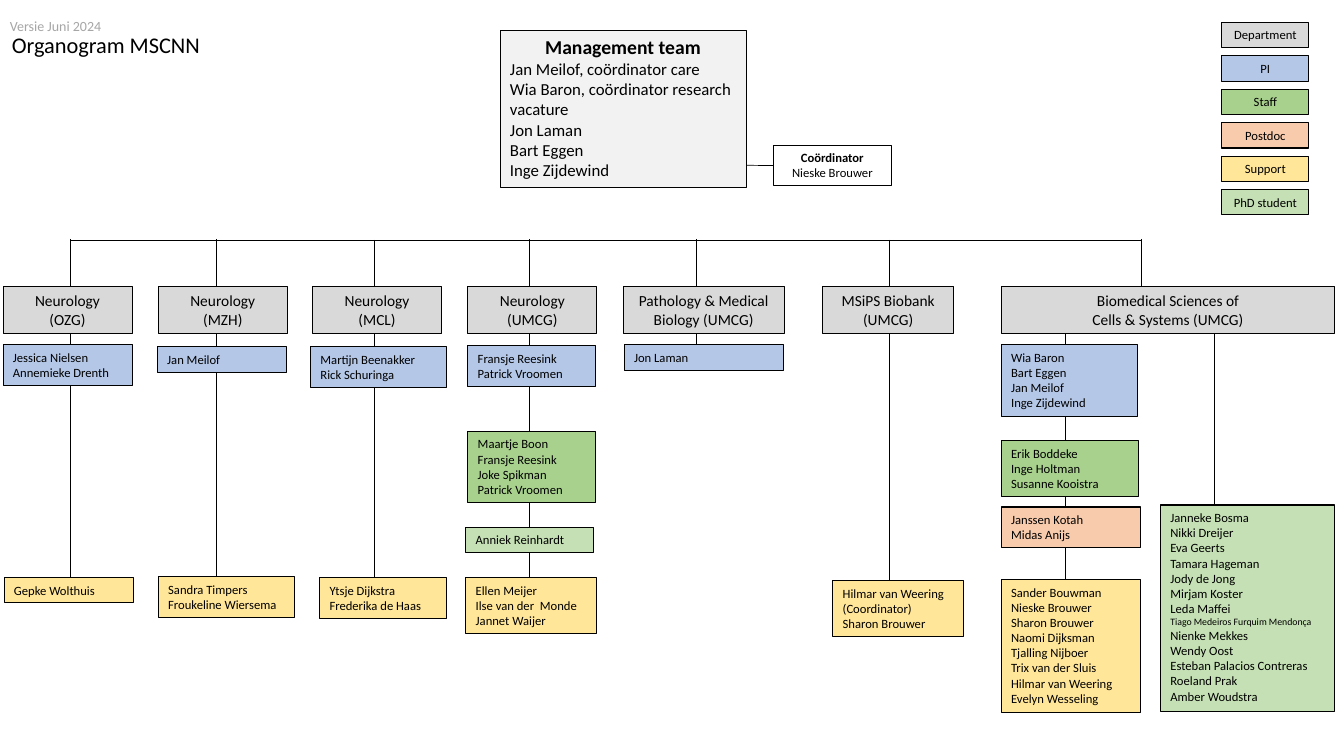
from lxml import etree
from pptx import Presentation
from pptx.dml.color import RGBColor
from pptx.enum.shapes import MSO_CONNECTOR as Line, MSO_SHAPE as Shape
from pptx.enum.text import MSO_ANCHOR as Anchor, MSO_AUTO_SIZE as AutoSize, PP_ALIGN as Align
from pptx.oxml.ns import qn
from pptx.util import Emu, Pt

PX = 9144  # one px is a hundredth of an inch
FONT = "Calibri"
LINE_PX = 1.22 * 100 / 72  # line height in px for each point of text size
INSET = 10
COLORS = {
    "Department": "D9D9D9", "PI": "B4C7E7", "Staff": "A9D18E",
    "Postdoc": "F8CBAD", "Support": "FFE699", "PhD student": "C5E0B4",
    "management": "F2F2F2", "white": "FFFFFF", "black": "000000", "muted": "A6A6A6",
}
SMALL_NAMES = {"Tiago Medeiros Furquim Mendonça": 7}


def px(value):
    return Emu(round(value * PX))


def color(name):
    return RGBColor.from_string(COLORS[name])


def write(para, text, size=9, bold=False, ink="black", align=Align.LEFT):
    para.alignment = align
    span = para.add_run()
    span.text = text
    span.font.name = FONT
    span.font.size = Pt(size)
    span.font.bold = bold
    span.font.color.rgb = color(ink)


def add_box(page, fill, left, top, width, lines, size=9, align=Align.LEFT,
            lead_size=None, height=None):
    """Draw a filled box; lead_size makes the first line a bold centred heading."""
    sizes = [SMALL_NAMES.get(line, size) for line in lines]
    if lead_size:
        sizes[0] = lead_size
    height = height or 2 * INSET / 2 + LINE_PX * sum(sizes)
    box = page.shapes.add_shape(Shape.RECTANGLE, px(left), px(top), px(width), px(height))
    box.shadow.inherit = False
    box.fill.solid()
    box.fill.fore_color.rgb = color(fill)
    box.line.color.rgb = color("black")
    box.line.width = Pt(0.75)
    frame = box.text_frame
    frame.word_wrap = True
    frame.vertical_anchor = Anchor.TOP
    for index, (line, line_size) in enumerate(zip(lines, sizes)):
        para = frame.add_paragraph() if index else frame.paragraphs[0]
        lead = bool(lead_size) and index == 0
        write(para, line, size=line_size, bold=lead, align=Align.CENTER if lead else align)
    return box


def add_line(page, x1, y1, x2, y2):
    line = page.shapes.add_connector(Line.STRAIGHT, px(x1), px(y1), px(x2), px(y2))
    line.line.color.rgb = color("black")
    line.line.width = Pt(0.5)
    etree.SubElement(line._element.spPr, qn("a:effectLst"))
    return line


def add_titles(page, left, top):
    title = page.shapes.title
    version = page.shapes.add_textbox(px(left), px(top), px(193), px(27))
    title.left, title.top, title.width, title.height = px(left), px(top + 14), px(210), px(37)
    for box in (title, version):
        box.text_frame.auto_size = AutoSize.NONE
        box.text_frame.vertical_anchor = Anchor.TOP
    title.text_frame.word_wrap = False
    version.text_frame.word_wrap = True
    write(title.text_frame.paragraphs[0], "Organogram MSCNN", size=16, align=Align.CENTER)
    write(version.text_frame.paragraphs[0], "Versie Juni 2024", size=10, ink="muted")


def add_legend(page, left, top, width):
    roles = ("Department", "PI", "Staff", "Postdoc", "Support", "PhD student")
    for index, role in enumerate(roles):
        add_box(page, role, left, top + 33.2 * index, width, [role], align=Align.CENTER)


def add_management(page, left, top, width):
    add_box(page, "management", left, top, width,
            ["Management team", "Jan Meilof, coördinator care",
             "Wia Baron, coördinator research", "vacature", "Jon Laman",
             "Bart Eggen", "Inge Zijdewind"], size=12, lead_size=14)
    coordinator = add_box(page, "white", left + width + 27, top + 114, 117,
                          ["Coördinator", "Nieske Brouwer"], lead_size=9, align=Align.CENTER)
    link = add_line(page, left + width, top + 134, left + width + 27, top + 134)
    link.end_connect(coordinator, 1)


def add_column(page, left, top, width, heading, stems, groups):
    """Stems are (x, start, end) and groups (role, x, y, width, names) from left and top."""
    for x, start, end in stems:
        add_line(page, left + x, top + start, left + x, top + end)
    add_box(page, "Department", left, top + 47, width, heading, size=11,
            align=Align.CENTER, height=47)
    for role, x, y, group_width, names in groups:
        add_box(page, role, left + x, top + y, group_width, names)


# Each column: left, width, heading, stems, groups
COLUMNS = [
    (3, 128, ["Neurology", "(OZG)"], [(67, 0, 339)], [
        ("PI", 0, 105, 128, ["Jessica Nielsen", "Annemieke Drenth"]),
        ("Support", 1, 336, 128, ["Gepke Wolthuis"])]),
    (157, 128, ["Neurology", "(MZH)"], [(58, 0, 339)], [
        ("PI", -1, 107, 128, ["Jan Meilof"]),
        ("Support", 0, 335, 135, ["Sandra Timpers", "Froukeline Wiersema"])]),
    (310, 128, ["Neurology", "(MCL)"], [(61, 1, 341)], [
        ("PI", -2, 107, 135, ["Martijn Beenakker", "Rick Schuringa"]),
        ("Support", 7, 336, 126, ["Ytsje Dijkstra", "Frederika de Haas"])]),
    (464, 128, ["Neurology", "(UMCG)"], [(61, 0, 339)], [
        ("PI", 0, 106, 127, ["Fransje Reesink", "Patrick Vroomen"]),
        ("Staff", 0, 191, 127, ["Maartje Boon", "Fransje Reesink",
                                "Joke Spikman", "Patrick Vroomen"]),
        ("PhD student", -2, 286, 127, ["Anniek Reinhardt"]),
        ("Support", -2, 336, 130, ["Ellen Meijer", "Ilse van der  Monde",
                                   "Jannet Waijer"])]),
    (618, 160, ["Pathology & Medical Biology (UMCG)"], [(73, 0, 109)], [
        ("PI", 1, 105, 158, ["Jon Laman"])]),
    (816, 130, ["MSiPS Biobank", "(UMCG)"], [(66, 1, 349)], [
        ("Support", 10, 339, 130, ["Hilmar van Weering", "(Coordinator)",
                                   "Sharon Brouwer"])]),
    (993, 331, ["Biomedical Sciences of", "Cells & Systems (UMCG)"],
     [(139, 0, 63), (64, 88, 434), (211, 93, 431)], [
        ("PI", 0, 105, 135, ["Wia Baron", "Bart Eggen", "Jan Meilof", "Inge Zijdewind"]),
        ("Staff", 0, 200, 136, ["Erik Boddeke", "Inge Holtman", "Susanne Kooistra"]),
        ("Postdoc", 0, 266, 138, ["Janssen Kotah", "Midas Anijs"]),
        ("Support", 0, 338, 138, ["Sander Bouwman", "Nieske Brouwer", "Sharon Brouwer",
                                  "Naomi Dijksman", "Tjalling Nijboer",
                                  "Trix van der Sluis", "Hilmar van Weering",
                                  "Evelyn Wesseling"]),
        ("PhD student", 158, 264, 173, ["Janneke Bosma", "Nikki Dreijer", "Eva Geerts",
                                        "Tamara Hageman", "Jody de Jong", "Mirjam Koster",
                                        "Leda Maffei", "Tiago Medeiros Furquim Mendonça",
                                        "Nienke Mekkes", "Wendy Oost",
                                        "Esteban Palacios Contreras", "Roeland Prak",
                                        "Amber Woudstra"])]),
]


def add_departments(page, top):
    add_line(page, 70, top + 1, 1132, top + 1)
    for left, width, heading, stems, groups in COLUMNS:
        add_column(page, left, top, width, heading, stems, groups)


def main():
    deck = Presentation()
    deck.slide_width, deck.slide_height = px(1333), px(750)
    page = deck.slides.add_slide(deck.slide_layouts[5])  # title only
    add_titles(page, 0, 12)
    add_management(page, 496, 30, 244)
    add_legend(page, 1212, 22, 86)
    add_departments(page, 237)
    deck.save("out.pptx")


if __name__ == "__main__":
    main()
